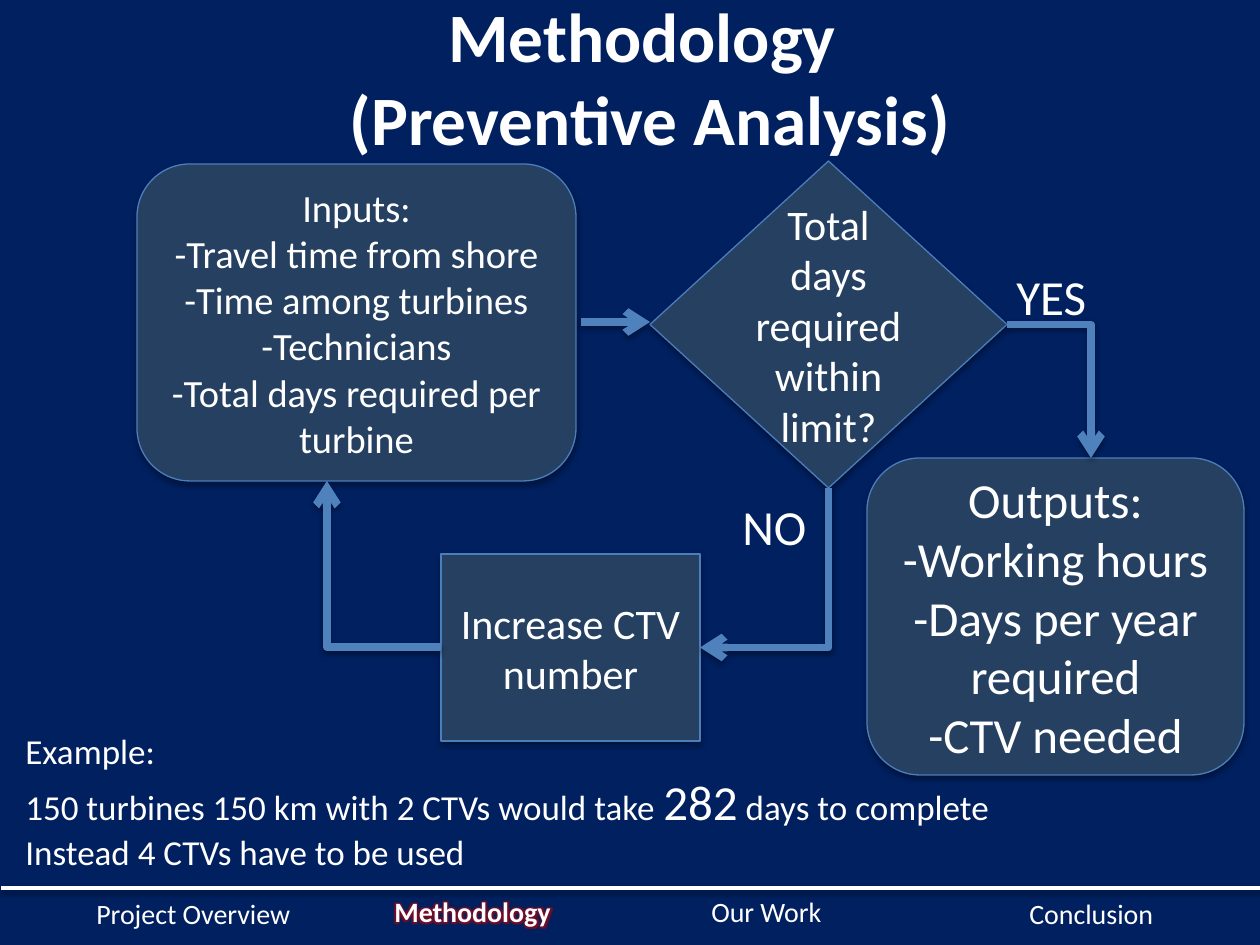
from dataclasses import dataclass

from lxml import etree
from pptx import Presentation
from pptx import util as u
from pptx.dml import color
from pptx.enum import shapes, text
from pptx.oxml import ns

PX = u.Inches(1) / 126


def emu(px):
    return u.Emu(round(px * PX))


@dataclass(frozen=True)
class Theme:
    font: str = "Calibri"
    background: str = "002060"
    ink: str = "FFFFFF"
    box: str = "254061"
    edge: str = "4B7EBC"
    arrow: str = "4F81BD"
    shade: str = "000000"
    glow: str = "C00000"
    title: float = 39.6
    large: int = 28
    step: int = 24
    inputs: int = 22
    body: int = 20
    menu: int = 16


def rgb(value):
    return color.RGBColor.from_string(value)


def add_effect(holder, kind, tint, alpha, **values):
    effect = etree.SubElement(holder, ns.qn(f"a:{kind}"), values)
    tone = etree.SubElement(effect, ns.qn("a:srgbClr"), val=tint)
    etree.SubElement(tone, ns.qn("a:alpha"), val=str(alpha * 1000))


class SlideBuilder:
    def __init__(self, page, theme):
        self.page = page
        self.theme = theme
        page.background.fill.solid()
        page.background.fill.fore_color.rgb = rgb(theme.background)

    def shadow(self, item, alpha, distance):
        effects = etree.SubElement(item._element.spPr, ns.qn("a:effectLst"))
        add_effect(effects, "outerShdw", self.theme.shade, alpha, blurRad="40000",
                   dist=str(distance), dir="5400000", rotWithShape="0")

    def fill_text(self, frame, paragraphs, size, align=text.PP_ALIGN.LEFT, bold=False):
        for index, content in enumerate(paragraphs):
            para = frame.paragraphs[0] if index == 0 else frame.add_paragraph()
            para.alignment = align
            spans = [(content, size)] if isinstance(content, str) else content
            for words, points in spans:
                for number, line in enumerate(words.split("\n")):
                    if number:
                        para.add_line_break()
                    span = para.add_run()
                    span.text = line
                    style = {"name": self.theme.font, "size": u.Pt(points), "bold": bold}
                    for name, value in style.items():
                        setattr(span.font, name, value)
                    span.font.color.rgb = rgb(self.theme.ink)

    def label(self, area, paragraphs, size, wrap=True, grow=True, **style):
        box = self.page.shapes.add_textbox(*map(emu, area))
        resize = text.MSO_AUTO_SIZE
        settings = {
            "word_wrap": wrap,
            "auto_size": resize.SHAPE_TO_FIT_TEXT if grow else resize.NONE,
            "vertical_anchor": text.MSO_ANCHOR.TOP if grow else text.MSO_ANCHOR.MIDDLE,
        }
        for name, value in settings.items():
            setattr(box.text_frame, name, value)
        self.fill_text(box.text_frame, paragraphs, size, **style)
        return box

    def highlight(self, box):
        properties = box.text_frame.paragraphs[0].runs[0]._r.rPr
        effects = etree.Element(ns.qn("a:effectLst"))
        add_effect(effects, "glow", self.theme.glow, 60, rad="63500")
        properties.find(ns.qn("a:solidFill")).addnext(effects)

    def step(self, kind, area, paragraphs, size):
        box = self.page.shapes.add_shape(kind, *map(emu, area))
        box.fill.solid()
        box.fill.fore_color.rgb = rgb(self.theme.box)
        box.line.color.rgb = rgb(self.theme.edge)
        box.line.width = u.Pt(0.75)
        self.shadow(box, 35, 23000)
        box.text_frame.word_wrap = True
        box.text_frame.vertical_anchor = text.MSO_ANCHOR.MIDDLE
        self.fill_text(box.text_frame, paragraphs, size, text.PP_ALIGN.CENTER)
        return box

    def line(self, start, end, tint, width, kind=shapes.MSO_CONNECTOR.STRAIGHT):
        link = self.page.shapes.add_connector(kind, *map(emu, start + end))
        link.line.color.rgb = rgb(tint)
        link.line.width = u.Pt(width)
        self.shadow(link, 38, 20000)
        return link

    def arrow(self, start, end, kind=shapes.MSO_CONNECTOR.STRAIGHT):
        link = self.line(start, end, self.theme.arrow, 4.5, kind)
        stroke = link._element.spPr.find(ns.qn("a:ln"))
        etree.SubElement(stroke, ns.qn("a:tailEnd"), type="arrow")
        return link

    def bent_arrow(self, start, end, source, side, target=None, target_side=0):
        link = self.arrow(start, end, shapes.MSO_CONNECTOR.ELBOW)
        link.begin_connect(source, side)
        if target is not None:
            link.end_connect(target, target_side)
        properties = link._element.spPr
        properties.find(ns.qn("a:prstGeom")).set("prst", "bentConnector2")
        if side == 2:
            self.turn(link, properties.find(ns.qn("a:xfrm")))
        return link

    def turn(self, link, transform):
        left, top, width, height = link.left, link.top, link.width, link.height
        for name in ("flipH", "flipV"):
            transform.attrib.pop(name, None)
        transform.set("rot", "5400000")
        turned = {"left": left + (width - height) // 2,
                  "top": top + (height - width) // 2,
                  "width": height, "height": width}
        for name, value in turned.items():
            setattr(link, name, u.Emu(value))


def main():
    theme = Theme()
    deck = Presentation()
    deck.slide_width, deck.slide_height = emu(1260), emu(945)
    build = SlideBuilder(deck.slides.add_slide(deck.slide_layouts[6]), theme)

    menu = [("Project Overview", 84, 890), ("Methodology", 382, 888),
            ("Our Work", 699, 888), ("Conclusion", 1017, 890)]
    for name, left, top in menu:
        current = name == "Methodology"
        entry = build.label((left, top, 277, 47), [name], theme.menu, bold=current)
        if current:
            build.highlight(entry)
    build.line((1, 888), (1260, 888), theme.ink, 2)

    build.label((83, 13, 1134, 127), ["Methodology \n(Preventive Analysis)"],
                theme.title, grow=False, align=text.PP_ALIGN.CENTER, bold=True)

    kinds = shapes.MSO_SHAPE
    decision = build.step(kinds.FLOWCHART_DECISION, (650, 161, 357, 327),
                          ["Total days required within limit?"], theme.step)
    increase = build.step(kinds.FLOWCHART_PROCESS, (441, 554, 259, 187),
                          ["Increase CTV number"], theme.step)
    build.step(kinds.FLOWCHART_ALTERNATE_PROCESS, (137, 164, 439, 317),
               ["Inputs:", "-Travel time from shore", "-Time among turbines",
                "-Technicians", "-Total days required per turbine"], theme.inputs)
    build.step(kinds.FLOWCHART_ALTERNATE_PROCESS, (867, 458, 377, 317),
               ["Outputs:", "-Working hours", "-Days per year required",
                "-CTV needed"], theme.large)

    build.arrow((581, 322), (650, 322))
    build.bent_arrow((441, 648), (327, 481), increase, 1)
    build.bent_arrow((828, 488), (700, 648), decision, 2, increase, 3)
    build.bent_arrow((1007, 325), (1091, 458), decision, 3)

    build.label((1004, 260, 100, 72), ["YES"], theme.large)
    build.label((730, 490, 100, 72), ["NO"], theme.large)
    build.label((13, 723, 998, 158), [
        "Example:",
        [("150 turbines 150 km with 2 CTVs would take ", theme.body),
         ("282", theme.large), (" days to complete", theme.body)],
        "Instead 4 CTVs have to be used",
    ], theme.body, wrap=False)

    deck.save("out.pptx")


if __name__ == "__main__":
    main()
